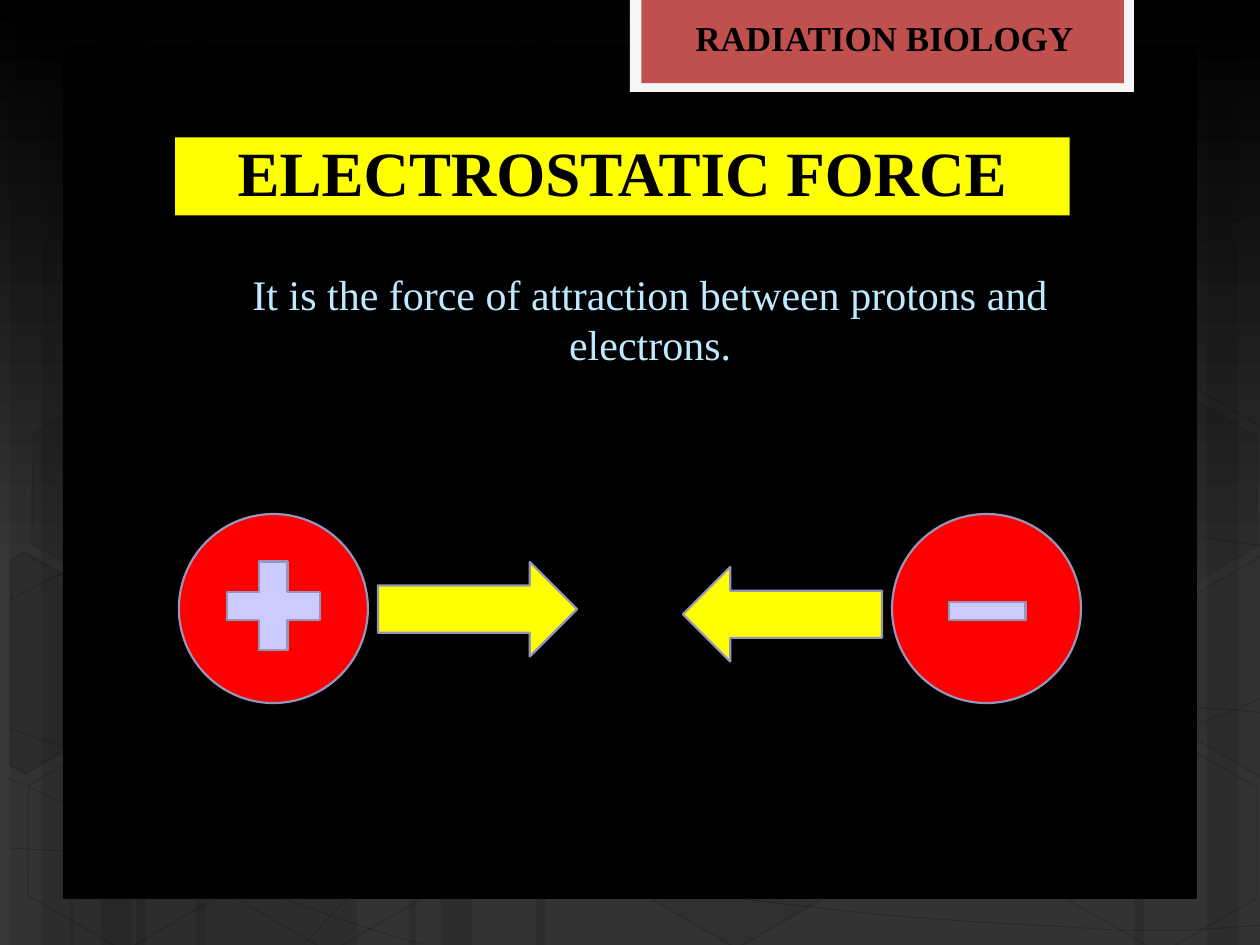
import math
from dataclasses import dataclass

import lxml.etree
import pptx
import pptx.dml.color
import pptx.enum.shapes
import pptx.enum.text
import pptx.oxml.ns
import pptx.util

Inches = pptx.util.Inches
Kind = pptx.enum.shapes.MSO_SHAPE
Align = pptx.enum.text.PP_ALIGN
Anchor = pptx.enum.text.MSO_ANCHOR
qualified = pptx.oxml.ns.qn


@dataclass(frozen=True)
class Theme:
    black: str = "000000"
    gray: str = "393939"
    frame: str = "F5F5F5"
    tab: str = "C0504D"
    yellow: str = "FFFF00"
    red: str = "FF0000"
    sign: str = "CBCBFF"
    outline: str = "9696BD"
    body: str = "BDEAFF"
    font: str = "Times New Roman"
    title_size: int = 36
    body_size: int = 24
    label_size: int = 20


THEME = Theme()


@dataclass(frozen=True)
class Area:
    left: float
    top: float
    width: float
    height: float

    def lengths(self) -> list:
        return [Inches(v) for v in (self.left, self.top, self.width, self.height)]


@dataclass(frozen=True)
class Paint:
    fill: str | None = None
    fill_alpha: int = 100
    line: str | None = None
    line_width: float = 1.25
    line_alpha: int = 100


@dataclass(frozen=True)
class Hexagon:
    left: float
    top: float
    fill_alpha: int
    line_alpha: int


@dataclass(frozen=True)
class CutHexagon:
    center: tuple
    points: list
    fill_alpha: int


def rgb(color: str):
    return pptx.dml.color.RGBColor.from_string(color)


def apply_color(fill, color: str, alpha: int, parent) -> None:
    fill.solid()
    fill.fore_color.rgb = rgb(color)
    if alpha < 100:
        solid = parent.find(qualified("a:solidFill"))
        element = lxml.etree.SubElement(solid[0], qualified("a:alpha"))
        element.set("val", str(alpha * 1000))


def apply_paint(shape, paint: Paint) -> None:
    shape.shadow.inherit = False
    properties = shape._element.spPr
    if paint.fill and paint.fill_alpha:
        apply_color(shape.fill, paint.fill, paint.fill_alpha, properties)
    else:
        shape.fill.background()
    if paint.line:
        shape.line.width = pptx.util.Pt(paint.line_width)
        line = properties.find(qualified("a:ln"))
        apply_color(shape.line.fill, paint.line, paint.line_alpha, line)
    else:
        shape.line.fill.background()


def add_preset(page, kind, area: Area, paint: Paint, rotation: float = 0):
    shape = page.shapes.add_shape(kind, *area.lengths())
    shape.rotation = rotation
    apply_paint(shape, paint)
    return shape


def add_path(page, points: list, closed: bool, paint: Paint):
    scaled = [(Inches(x), Inches(y)) for x, y in points]
    builder = page.shapes.build_freeform(*scaled[0])
    builder.add_line_segments(scaled[1:], close=closed)
    shape = builder.convert_to_shape()
    apply_paint(shape, paint)
    return shape


def add_curve(page, knots: list, paint: Paint) -> None:
    shape = add_path(page, knots, False, paint)
    segments = list(shape._element.iter(qualified("a:lnTo")))
    for i in range(0, len(segments), 3):
        curve = lxml.etree.Element(qualified("a:cubicBezTo"))
        segments[i].addprevious(curve)
        for segment in segments[i:i + 3]:
            curve.append(segment[0])
            segment.getparent().remove(segment)


def turn(point: tuple, center: tuple, degrees: float) -> tuple:
    angle = math.radians(degrees)
    x, y = point[0] - center[0], point[1] - center[1]
    return (center[0] + x * math.cos(angle) - y * math.sin(angle),
            center[1] + x * math.sin(angle) + y * math.cos(angle))


def set_text(box, text: str, size: int, color: str, bold: bool, align):
    frame = box.text_frame
    frame.word_wrap = True
    frame.text = text
    para = frame.paragraphs[0]
    para.alignment = align
    for span in para.runs:
        span.font.name = THEME.font
        span.font.size = pptx.util.Pt(size)
        span.font.bold = bold
        span.font.color.rgb = rgb(color)
    return para


STRIPE_GROUPS = [(0.08, 1, 1.75), (0.55, 1, 1.75), (10.08, -1, 1.75), (3.25, 1, 3.08)]

WAVES = [
    [(0.07, 6.73), (0.61, 6.76), (1.15, 6.79), (1.9, 6.78), (2.65, 6.77), (3.58, 6.75),
     (4.58, 6.65), (5.58, 6.55), (7, 6.36), (7.92, 6.17), (8.83, 5.98), (9.77, 5.68),
     (10.07, 5.51)],
    [(0.07, 4.77), (0.36, 4.61), (0.65, 4.46), (1.21, 4.31), (1.78, 4.16), (2.59, 3.94),
     (3.47, 3.87), (4.36, 3.8), (5.44, 3.79), (6.54, 3.87), (7.64, 3.95), (9.47, 4.26),
     (10.07, 4.34)],
    [(0.06, 6.17), (1.27, 6.72), (2.47, 7.27), (3.34, 7.49)],
    [(0.07, 5.78), (0.38, 5.89), (0.7, 6), (1.28, 6.16), (1.86, 6.31), (2.73, 6.56),
     (3.57, 6.73), (4.4, 6.9), (5.45, 7.08), (6.28, 7.18), (7.11, 7.29), (8, 7.33),
     (8.53, 7.36), (9.05, 7.4), (9.19, 7.38), (9.45, 7.38), (9.71, 7.37), (9.89, 7.35),
     (10.07, 7.34)],
    [(2.42, 7.49), (2.6, 7.29), (2.78, 7.09), (3.02, 6.91), (3.26, 6.73), (3.6, 6.53),
     (3.88, 6.39), (4.16, 6.25), (4.33, 6.19), (4.7, 6.09), (5.06, 5.99), (5.73, 5.85),
     (6.08, 5.78), (6.44, 5.71), (6.49, 5.71), (6.8, 5.69), (7.11, 5.66), (7.6, 5.63),
     (7.94, 5.62), (8.29, 5.61), (8.86, 5.62), (8.86, 5.62), (9.08, 5.62), (9.31, 5.62),
     (9.53, 5.62), (9.71, 5.63), (9.88, 5.64), (9.97, 5.65), (10.06, 5.66), (10.03, 5.65),
     (10.06, 5.66)],
]

HEXAGONS = [
    Hexagon(3.34, 0.36, 4, 8), Hexagon(4.97, 5.89, 6, 12), Hexagon(0.11, 5.91, 0, 12),
    Hexagon(0.14, 3.12, 7, 8), Hexagon(1.74, 5.92, 0, 12), Hexagon(8.34, 5.93, 0, 12),
    Hexagon(8.34, 3.14, 7, 8),
]

CUT_HEXAGONS = [
    CutHexagon((0.36, 5.35), [(0.08, 4.45), (0.19, 4.38), (0.96, 4.82), (0.95, 5.7),
                              (0.2, 6.14), (0.08, 6.07)], 10),
    CutHexagon((9.85, 5.2), [(9.26, 4.85), (10.01, 4.41), (10.09, 4.46), (10.09, 6.13),
                             (10.02, 6.17), (9.26, 5.73)], 4),
    CutHexagon((9.85, 2.41), [(9.26, 2.07), (10.01, 1.63), (10.1, 1.68), (10.09, 3.35),
                              (10.02, 3.39), (9.26, 2.95)], 0),
]


def draw_backdrop(page) -> None:
    fill = page.background.fill
    fill.gradient()
    fill.gradient_angle = 270
    for stop, color, position in zip(fill.gradient_stops, (THEME.black, THEME.gray), (0, 0.62)):
        stop.color.rgb = rgb(color)
        stop.position = position
    for start, direction, wide in STRIPE_GROUPS:
        for offset, width in ((1, wide), (0, 0.5), (0.25, 0.83)):
            left = start + offset if direction > 0 else start - offset - width
            add_preset(page, Kind.RECTANGLE, Area(left, 0, width, 7.5), Paint(THEME.black, 10))
    for knots in WAVES:
        add_curve(page, knots, Paint(line=THEME.black, line_width=0.5, line_alpha=20))
    for item in HEXAGONS:
        paint = Paint(THEME.black, item.fill_alpha, THEME.black, 1, item.line_alpha)
        shape = add_preset(page, Kind.HEXAGON, Area(item.left, item.top, 1.75, 1.52), paint, 30)
        shape.adjustments[0] = 0.285
    for item in CUT_HEXAGONS:
        level = [turn(point, item.center, -30) for point in item.points]
        paint = Paint(THEME.black, item.fill_alpha, THEME.black, 1, 12)
        add_path(page, level, True, paint).rotation = 30
    add_preset(page, Kind.RECTANGLE, Area(0.5, 0.36, 9, 6.77),
               Paint(THEME.black, line=THEME.black, line_width=0.5))
    add_preset(page, Kind.RECTANGLE, Area(5, 0, 4, 0.73), Paint(THEME.frame))
    add_preset(page, Kind.RECTANGLE, Area(5.09, 0, 3.83, 0.66), Paint(THEME.tab))


def draw_texts(page) -> None:
    title = add_preset(page, Kind.RECTANGLE, Area(1.39, 1.09, 7.1, 0.62), Paint(THEME.yellow))
    title.text_frame.vertical_anchor = Anchor.BOTTOM
    title.text_frame.margin_top = 0
    title.text_frame.margin_bottom = Inches(0.05)
    set_text(title, "ELECTROSTATIC FORCE", THEME.title_size, THEME.black, True, Align.CENTER)
    body = page.shapes.add_textbox(*Area(1.42, 2.08, 7.41, 3.84).lengths())
    para = set_text(body, "It is the force of attraction between protons and electrons.",
                    THEME.body_size, THEME.body, False, Align.CENTER)
    para._p.get_or_add_pPr().set("marL", str(Inches(0.07)))
    label = page.shapes.add_textbox(*Area(5.42, 0.08, 3.58, 0.44).lengths())
    set_text(label, "RADIATION BIOLOGY", THEME.label_size, THEME.black, True, Align.LEFT)


def draw_charges(page) -> None:
    for kind, area, color, rotation in (
        (Kind.OVAL, Area(1.42, 4.08, 1.5, 1.5), THEME.red, 0),
        (Kind.OVAL, Area(7.08, 4.08, 1.5, 1.5), THEME.red, 0),
        (Kind.RIGHT_ARROW, Area(3, 4.46, 1.58, 0.75), THEME.yellow, 0),
        (Kind.RIGHT_ARROW, Area(5.42, 4.5, 1.58, 0.75), THEME.yellow, 180),
        (Kind.MATH_PLUS, Area(1.67, 4.33, 1, 0.96), THEME.sign, 0),
        (Kind.MATH_MINUS, Area(7.42, 4.54, 0.83, 0.62), THEME.sign, 0),
    ):
        add_preset(page, kind, area, Paint(color, line=THEME.outline), rotation)


def main() -> None:
    deck = pptx.Presentation()
    deck.slide_width, deck.slide_height = Inches(10), Inches(7.5)
    page = deck.slides.add_slide(deck.slide_layouts[6])
    draw_backdrop(page)
    draw_texts(page)
    draw_charges(page)
    deck.save("out.pptx")


if __name__ == "__main__":
    main()
